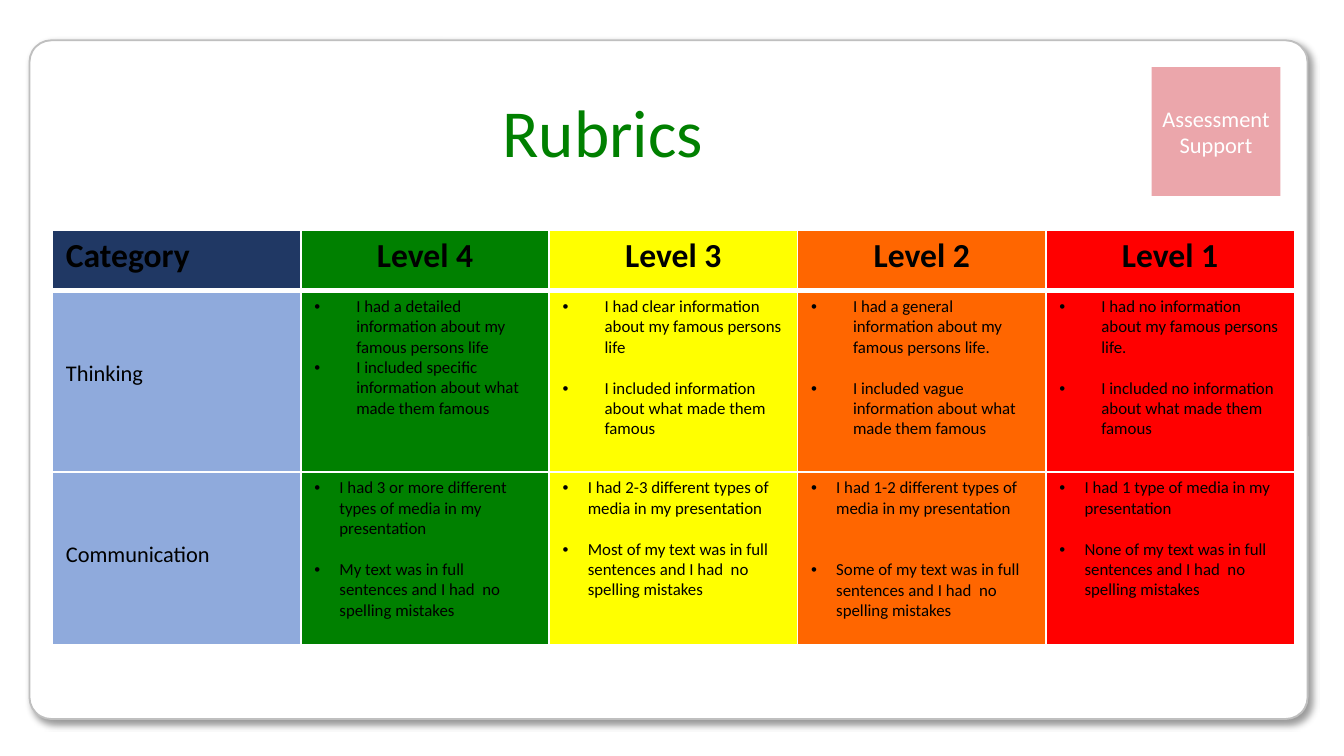
import pptx
import pptx.dml.color
import pptx.enum.shapes
import pptx.enum.text
import pptx.oxml
import pptx.oxml.ns
import pptx.util
from lxml import etree

Pt = pptx.util.Pt
ALIGN = pptx.enum.text.PP_ALIGN
ANCHOR = pptx.enum.text.MSO_ANCHOR
SHAPES = pptx.enum.shapes.MSO_SHAPE
FONT = "Calibri"
LINE = 11  # height of one line of 9 pt text
COLORS = {
    "white": "FFFFFF", "black": "000000", "border": "BFBFBF", "badge": "EBA6AB",
    "navy": "203864", "blue": "8FAADC", "green": "008000", "yellow": "FFFF00",
    "orange": "FF6600", "red": "FF0000",
}
COLUMN_COLORS = ["green", "yellow", "orange", "red"]
HEADERS = ["Category", "Level 4", "Level 3", "Level 2", "Level 1"]
ROW_HEIGHTS = [32.4, 97.2, 92.4]
# Each criterion: name, bullet indent, then per level two statements and the lines between them
CRITERIA = [
    ("Thinking", 22.5, [
        ("I had a detailed information about my famous persons life",
         "I included specific information about what made them famous", 0),
        ("I had clear information about my famous persons life",
         "I included information about what made them famous", 1),
        ("I had a general information about my famous persons life.",
         "I included vague information about what made them famous", 1),
        ("I had no information about my famous persons life.",
         "I included no information about what made them famous", 1),
    ]),
    ("Communication", 13.5, [
        ("I had 3 or more different types of media in my presentation",
         "My text was in full sentences and I had  no spelling mistakes", 1),
        ("I had 2-3 different types of media in my presentation",
         "Most of my text was in full sentences and I had  no spelling mistakes", 1),
        ("I had 1-2 different types of media in my presentation",
         "Some of my text was in full sentences and I had  no spelling mistakes", 2),
        ("I had 1 type of media in my presentation",
         "None of my text was in full sentences and I had  no spelling mistakes", 1),
    ]),
]


def rgb(name):
    return pptx.dml.color.RGBColor.from_string(COLORS[name])


def add_element(parent, tag, **attributes):
    return etree.SubElement(parent, pptx.oxml.ns.qn(tag), **attributes)


def write(para, text, size=9, color="black", bold=False, align=ALIGN.LEFT,
          indent=0, before=0):
    """Put formatted text in a paragraph; an indent makes it a bullet."""
    para.alignment = align
    if indent:
        props = para._p.get_or_add_pPr()
        props.set("marL", str(Pt(indent)))
        props.set("indent", str(-Pt(indent)))
        add_element(props, "a:buFont", typeface="Arial")
        add_element(props, "a:buChar", char="•")
    if before:
        para.space_before = Pt(before)
    span = para.add_run()
    span.text = text
    span.font.name = FONT
    span.font.size = Pt(size)
    span.font.bold = bold
    span.font.color.rgb = rgb(color)


def add_filled_shape(page, kind, box, fill):
    shape = page.shapes.add_shape(kind, *map(Pt, box))
    shape.shadow.inherit = False
    shape.fill.solid()
    shape.fill.fore_color.rgb = rgb(fill)
    shape.line.fill.background()
    return shape


def add_panel(page, box):
    """Rounded white panel with a soft shadow."""
    panel = add_filled_shape(page, SHAPES.ROUNDED_RECTANGLE, box, "white")
    panel.adjustments[0] = 0.032
    panel.line.color.rgb = rgb("border")
    panel.line.width = Pt(1)
    effects = panel._element.spPr.find(pptx.oxml.ns.qn("a:effectLst"))
    shadow = add_element(effects, "a:outerShdw", blurRad=str(Pt(4)), dist=str(Pt(3)),
                         dir=str(45 * 60000), algn="tl", rotWithShape="0")
    tint = add_element(shadow, "a:srgbClr", val=COLORS["black"])
    add_element(tint, "a:alpha", val="40000")


def add_badge(page, box):
    badge = add_filled_shape(page, SHAPES.RECTANGLE, box, "badge")
    frame = badge.text_frame
    frame.word_wrap = True
    frame.vertical_anchor = ANCHOR.MIDDLE
    frame.margin_left = frame.margin_right = Pt(5)
    frame.margin_top = frame.margin_bottom = Pt(2.7)
    write(frame.paragraphs[0], "Assessment Support", size=12, color="white",
          align=ALIGN.CENTER)


def add_title(page, box):
    frame = page.shapes.add_textbox(*map(Pt, box)).text_frame
    frame.word_wrap = True
    write(frame.paragraphs[0], "Rubrics", size=36, color="green", align=ALIGN.CENTER)


def style_cell(cell, fill, top=1, bottom=1):
    """Set margins, white borders and fill."""
    cell.margin_left = cell.margin_right = Pt(7.2)
    cell.margin_top = cell.margin_bottom = Pt(3)
    props = cell._tc.get_or_add_tcPr()
    for side, width in (("L", 1), ("R", 1), ("T", top), ("B", bottom)):
        border = add_element(props, f"a:ln{side}", w=str(Pt(width)))
        solid = add_element(border, "a:solidFill")
        add_element(solid, "a:srgbClr", val=COLORS["white"])
    cell.fill.solid()
    cell.fill.fore_color.rgb = rgb(fill)


def add_rubric(page, box):
    table = page.shapes.add_table(len(CRITERIA) + 1, len(HEADERS), *map(Pt, box)).table
    for column in table.columns:
        column.width = Pt(box[2] / len(HEADERS))
    for row, height in zip(table.rows, ROW_HEIGHTS):
        row.height = Pt(height)

    for col, (header, fill) in enumerate(zip(HEADERS, ["navy"] + COLUMN_COLORS)):
        cell = table.cell(0, col)
        style_cell(cell, fill, bottom=3)
        write(cell.text_frame.paragraphs[0], header, size=18, bold=True,
              align=ALIGN.CENTER if col else ALIGN.LEFT)

    for row, (name, indent, levels) in enumerate(CRITERIA, 1):
        top = 3 if row == 1 else 1
        label = table.cell(row, 0)
        style_cell(label, "blue", top)
        label.margin_top = Pt(37)
        write(label.text_frame.paragraphs[0], name, size=12)
        for col, (first, second, gap) in enumerate(levels, 1):
            cell = table.cell(row, col)
            style_cell(cell, COLUMN_COLORS[col - 1], top)
            frame = cell.text_frame
            write(frame.paragraphs[0], first, indent=indent)
            write(frame.add_paragraph(), second, indent=indent, before=gap * LINE)


def main():
    deck = pptx.Presentation()
    deck.slide_width, deck.slide_height = Pt(720), Pt(405)
    page = deck.slides.add_slide(deck.slide_layouts[6])
    add_panel(page, (15.8, 21.6, 684.7, 363.6))
    add_badge(page, (617, 36, 69, 69))
    add_rubric(page, (28.1, 123.4, 665.3, sum(ROW_HEIGHTS)))
    add_title(page, (28.1, 44.6, 589.7, 51.1))
    deck.save("out.pptx")


if __name__ == "__main__":
    main()
